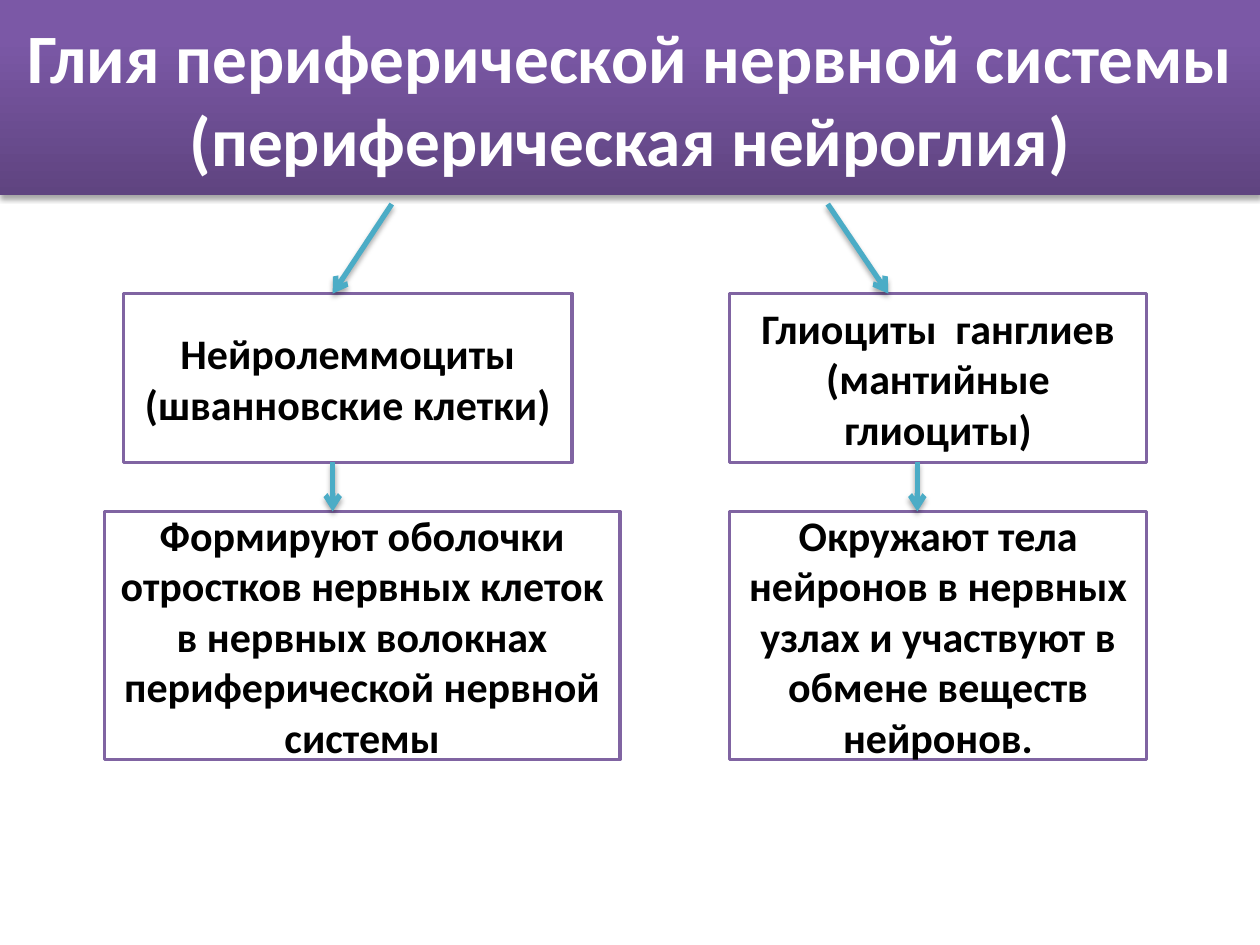
import copy
from dataclasses import dataclass

import lxml.etree
import pptx
import pptx.dml.color
import pptx.enum.shapes
import pptx.enum.text
import pptx.oxml.ns
import pptx.util

Pt = pptx.util.Pt
RGB = pptx.dml.color.RGBColor.from_string
qn = pptx.oxml.ns.qn


@dataclass(frozen=True)
class Theme:
    """Colours, font and sizes of the slide."""
    font: str = "Calibri"
    title_size: float = 39.6
    body_size: float = 24
    title_text: str = "FFFFFF"
    body_text: str = "000000"
    box_fill: str = "FFFFFF"
    box_line: str = "8064A2"
    arrow: str = "4BACC6"
    shadow: str = "000000"
    banner: tuple = ((0, "5F4480"), (0.8, "7B58A6"), (1, "7C57A8"))


THEME = Theme()


def add_shadow(sp):
    """Give a shape or connector a soft shadow falling straight down."""
    spPr = sp._element.spPr
    effects = spPr.find(qn("a:effectLst"))
    if effects is None:
        effects = lxml.etree.SubElement(spPr, qn("a:effectLst"))
    outer = lxml.etree.SubElement(
        effects, qn("a:outerShdw"), blurRad=str(Pt(3.1)), dist=str(Pt(1.8)),
        dir="5400000", rotWithShape="0")
    color = lxml.etree.SubElement(outer, qn("a:srgbClr"), val=THEME.shadow)
    lxml.etree.SubElement(color, qn("a:alpha"), val="35000")


def fill_gradient(sp, stops):
    """Fill a shape with a gradient rising from its bottom edge."""
    sp.fill.gradient()
    sp.fill.gradient_angle = 90
    gs_list = sp._element.spPr.find(".//" + qn("a:gsLst"))
    while len(gs_list) < len(stops):
        gs_list.append(copy.deepcopy(gs_list[-1]))
    for stop, (position, color) in zip(sp.fill.gradient_stops, stops):
        stop.position = position
        stop.color.rgb = RGB(color)


def add_panel(slide, box, text, size, color):
    """Place a rectangle with bold centred text in the given box."""
    sp = slide.shapes.add_shape(
        pptx.enum.shapes.MSO_SHAPE.RECTANGLE, *map(Pt, box))
    sp.shadow.inherit = False
    tf = sp.text_frame
    tf.word_wrap = True
    tf.vertical_anchor = pptx.enum.text.MSO_ANCHOR.MIDDLE
    p = tf.paragraphs[0]
    p.text = text
    p.alignment = pptx.enum.text.PP_ALIGN.CENTER
    p.font.name = THEME.font
    p.font.size = Pt(size)
    p.font.bold = True
    p.font.color.rgb = RGB(color)
    return sp


def add_banner(slide, box, text):
    """Place the title banner in the given box."""
    sp = add_panel(slide, box, text, THEME.title_size, THEME.title_text)
    fill_gradient(sp, THEME.banner)
    sp.line.fill.background()
    add_shadow(sp)


def add_card(slide, box, text):
    """Place an outlined text card in the given box."""
    sp = add_panel(slide, box, text, THEME.body_size, THEME.body_text)
    sp.fill.solid()
    sp.fill.fore_color.rgb = RGB(THEME.box_fill)
    sp.line.color.rgb = RGB(THEME.box_line)
    sp.line.width = Pt(2)


def add_arrow(slide, start, end):
    """Draw an arrow from start to end."""
    cxn = slide.shapes.add_connector(
        pptx.enum.shapes.MSO_CONNECTOR.STRAIGHT, *map(Pt, start + end))
    cxn.line.color.rgb = RGB(THEME.arrow)
    cxn.line.width = Pt(3)
    ln = cxn._element.spPr.find(qn("a:ln"))
    lxml.etree.SubElement(ln, qn("a:tailEnd"), type="arrow")
    add_shadow(cxn)


def add_branch(slide, box, type_span, role_span, texts, arrow_xs):
    """Place a cell type above its role, each led to by an arrow."""
    left, top, width, height = box
    lead, type_height, gap = 51.2, 96.5, 28
    type_top = top + lead
    type_bottom = type_top + type_height
    role_top = type_bottom + gap
    role_height = top + height - role_top
    rows = ((type_top, type_height), (role_top, role_height))
    for (x, share), (y, h), text in zip((type_span, role_span), rows, texts):
        add_card(slide, (left + x, y, share * width, h), text)
    start, tip, stem = (left + x for x in arrow_xs)
    add_arrow(slide, (start, top), (tip, type_top))
    add_arrow(slide, (stem, type_bottom), (stem, role_top))


def main():
    """Build the slide and save it."""
    prs = pptx.Presentation()
    prs.slide_width, prs.slide_height = Pt(720), Pt(540)
    slide = prs.slides.add_slide(prs.slide_layouts[6])
    add_banner(slide, (0, 0, 720, 111.6),
               "Глия периферической нервной системы "
               "(периферическая нейроглия)")
    add_branch(slide, (59.6, 116.6, 294.6, 317.5), (11, 0.87), (0, 1),
               ("Нейролеммоциты (шванновские клетки)",
                "Формируют оболочки отростков нервных клеток в нервных "
                "волокнах периферической нервной системы"),
               (164.3, 130.5, 130.5))
    add_branch(slide, (416.9, 116.6, 238.3, 317.5), (0, 1), (0, 1),
               ("Глиоциты  ганглиев (мантийные глиоциты)",
                "Окружают тела нейронов в нервных узлах и участвуют "
                "в обмене веществ нейронов."),
               (56.1, 90.7, 107.3))
    prs.save("out.pptx")


if __name__ == "__main__":
    main()
